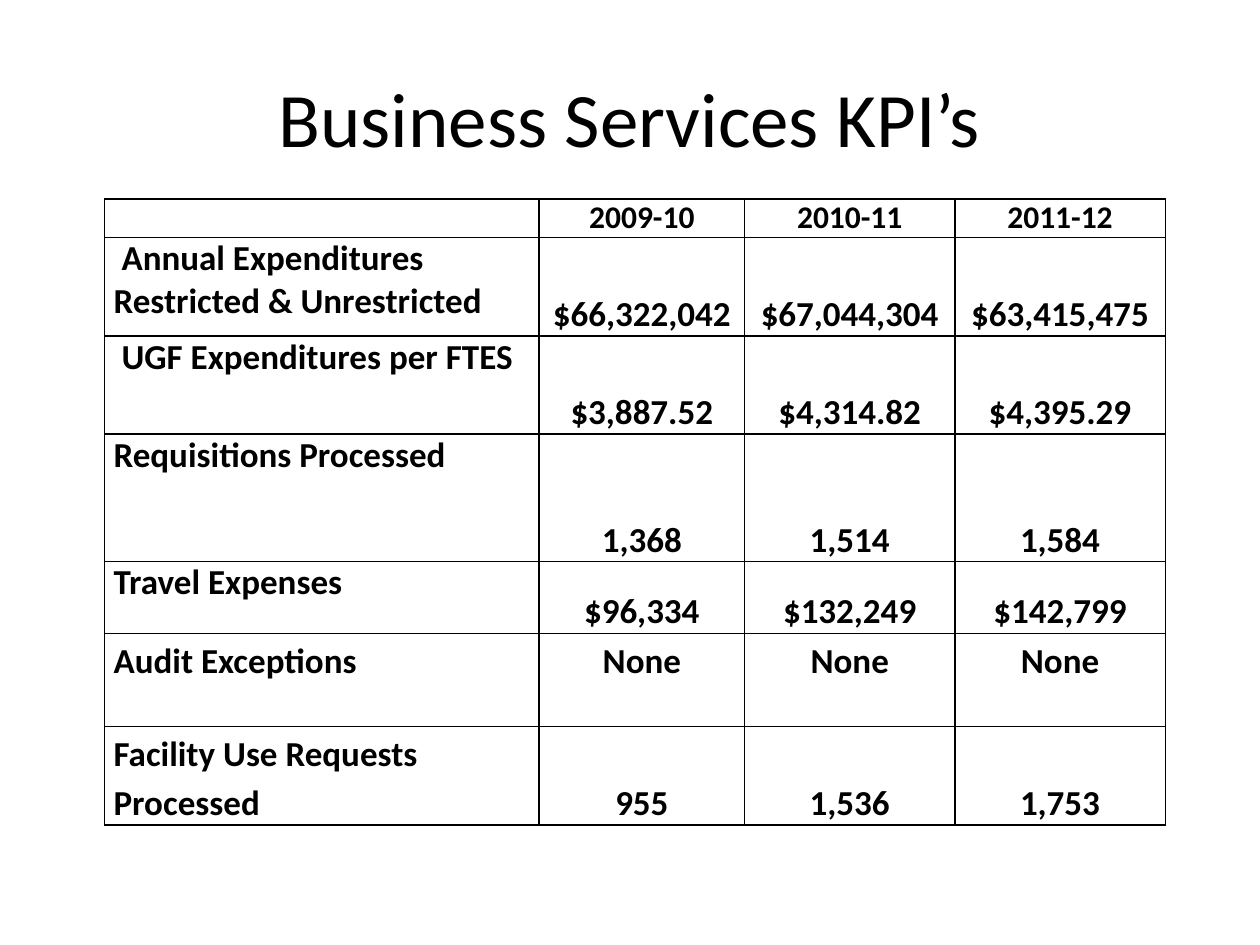
import pptx
import pptx.util
import pptx.dml.color
import pptx.enum.text
import pptx.oxml
import pptx.oxml.ns

Cm = pptx.util.Cm
Pt = pptx.util.Pt
ALIGN = pptx.enum.text.PP_ALIGN
ANCHOR = pptx.enum.text.MSO_ANCHOR

FONT = "Calibri"
HEX = {"text": "000000", "rule": "000000"}

YEARS = ["", "2009-10", "2010-11", "2011-12"]
# Label lines, indent of the first line in cm, values
ROWS = [
    (["Annual Expenditures", "Restricted & Unrestricted"], 0.16,
     ["$66,322,042", "$67,044,304", "$63,415,475"]),
    (["UGF Expenditures per FTES"], 0.16, ["$3,887.52", "$4,314.82", "$4,395.29"]),
    (["Requisitions Processed"], 0, ["1,368", "1,514", "1,584"]),
    (["Travel Expenses"], 0, ["$96,334", "$132,249", "$142,799"]),
    (["Audit Exceptions"], 0, ["None"] * 3),
    (["Facility Use Requests Processed"], 0, ["955", "1,536", "1,753"]),
]
WIDTHS = [8.76, 4.14, 4.24, 4.24]
HEIGHTS = [0.78, 1.98, 1.98, 2.57, 1.45, 1.88, 1.98]


def write(frame, lines, size=20, bold=True, align=ALIGN.LEFT, gap=None, indent=0):
    """Fill a text frame, one paragraph for each line."""
    frame.word_wrap = True
    for i, line in enumerate(lines):
        para = frame.paragraphs[0] if i == 0 else frame.add_paragraph()
        para.alignment = align
        if gap:
            para.line_spacing = gap
        if indent and i == 0:
            para._p.get_or_add_pPr().set("indent", str(Cm(indent)))
        run = para.add_run()
        run.text = line
        run.font.name = FONT
        run.font.size = Pt(size)
        run.font.bold = bold
        run.font.color.rgb = pptx.dml.color.RGBColor.from_string(HEX["text"])


def style(cell):
    """Set margins, ruled edges and an empty fill."""
    cell.margin_left = cell.margin_right = Cm(0.18)
    cell.margin_top = cell.margin_bottom = 0
    props = cell._tc.get_or_add_tcPr()
    for side in ("lnL", "lnR", "lnT", "lnB"):
        props.append(pptx.oxml.parse_xml(
            f'<a:{side} {pptx.oxml.ns.nsdecls("a")} w="{Pt(1)}"><a:solidFill>'
            f'<a:srgbClr val="{HEX["rule"]}"/></a:solidFill></a:{side}>'))
    cell.fill.background()


def add_title(slide, text):
    box = slide.shapes.add_textbox(Cm(1.27), Cm(0.76), Cm(22.86), Cm(3.18))
    box.text_frame.vertical_anchor = ANCHOR.MIDDLE
    write(box.text_frame, [text], size=44, bold=False, align=ALIGN.CENTER)


def add_grid(slide):
    frame = slide.shapes.add_table(
        len(HEIGHTS), len(WIDTHS), Cm(2.11), Cm(4.01),
        Cm(sum(WIDTHS)), Cm(sum(HEIGHTS)))
    table = frame.table
    table.first_row = table.horz_banding = False
    for col, width in zip(table.columns, WIDTHS):
        col.width = Cm(width)
    for row, height in zip(table.rows, HEIGHTS):
        row.height = Cm(height)
    for cell in table.iter_cells():
        style(cell)

    # Header row
    for c, year in enumerate(YEARS):
        write(table.cell(0, c).text_frame, [year], size=18, align=ALIGN.CENTER)

    # Measures: the last two labels are set wider, "None" sits at the top
    for r, (label, indent, values) in enumerate(ROWS, 1):
        write(table.cell(r, 0).text_frame, label, indent=indent,
              gap=1.15 if r >= 5 else None)
        for c, value in enumerate(values, 1):
            cell = table.cell(r, c)
            cell.vertical_anchor = ANCHOR.TOP if value == "None" else ANCHOR.BOTTOM
            write(cell.text_frame, [value], align=ALIGN.CENTER, gap=1.15)


def main():
    deck = pptx.Presentation()
    deck.slide_width, deck.slide_height = Cm(25.4), Cm(19.05)
    slide = deck.slides.add_slide(deck.slide_layouts[6])
    add_title(slide, "Business Services KPI’s")
    add_grid(slide)
    deck.save("out.pptx")


if __name__ == "__main__":
    main()
